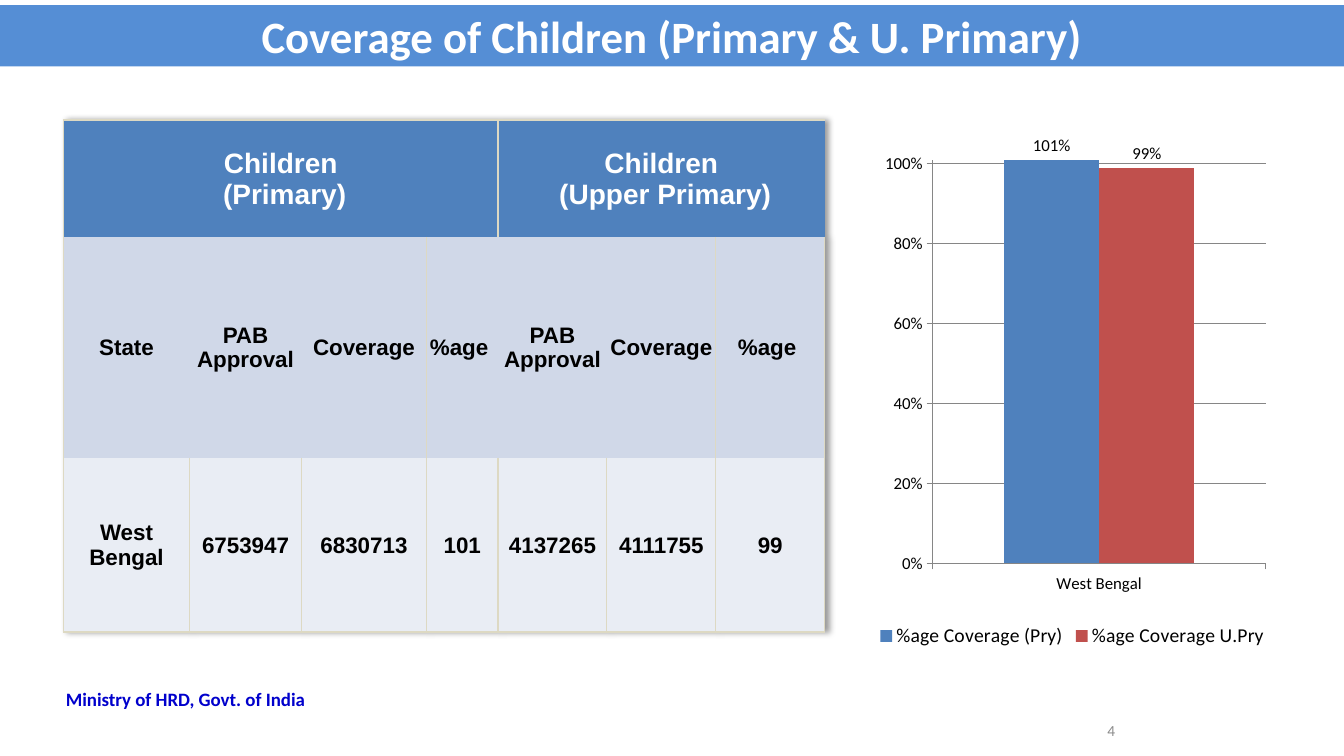
from lxml import etree
from pptx import Presentation
from pptx.chart.data import CategoryChartData
from pptx.dml.color import RGBColor
from pptx.enum.chart import XL_CHART_TYPE as ChartType, XL_LABEL_POSITION as LabelPos
from pptx.enum.chart import XL_LEGEND_POSITION as LegendPos, XL_TICK_MARK as Tick
from pptx.enum.shapes import MSO_SHAPE as Shape
from pptx.enum.text import MSO_ANCHOR as Anchor, PP_ALIGN as Align
from pptx.oxml import parse_xml
from pptx.oxml.ns import nsdecls, qn
from pptx.util import Inches, Pt

COLORS = {
    "banner": "558ED5", "white": "FFFFFF", "black": "000000",
    "primary": "4F81BD", "upper": "C0504D", "label_row": "D0D8E8",
    "data_row": "E9EDF4", "border": "DDD9C3", "footer": "0000CC",
    "number": "8C8C8C", "grid": "868686",
}
TITLE = "Coverage of Children (Primary & U. Primary)"
FOOTER = "Ministry of HRD, Govt. of India"
PAGE = "4"
GROUPS = [(0, 3, ["Children", " (Primary)"]), (4, 6, ["Children", " (Upper Primary)"])]
MEASURES = ["PAB Approval", "Coverage", "%age "]
LABELS = ["State"] + MEASURES * 2
VALUES = ["West Bengal", "6753947", "6830713", "101", "4137265", "4111755", "99"]
COLS = [1.25, 1.11, 1.24, 0.71, 1.08, 1.08, 1.08]
ROWS = [1.16, 2.19, 1.73]
DIVIDERS = [{4}, {3, 6}, {1, 2, 3, 4, 5, 6}]
SERIES = [("%age Coverage (Pry)", 1.01, "primary"), ("%age Coverage U.Pry", 0.99, "upper")]
PLOT = {"x": 0.166, "y": 0.084, "w": 0.797, "h": 0.751}


def rgb(name):
    return RGBColor.from_string(COLORS[name])


def style(font, size, color, name="Calibri", bold=False):
    font.size, font.name, font.bold = Pt(size), name, bold
    font.color.rgb = rgb(color)


def write(tf, lines, size, color, name="Calibri", bold=True, align=Align.CENTER):
    for i, line in enumerate(lines):
        p = tf.add_paragraph() if i else tf.paragraphs[0]
        p.alignment = align
        r = p.add_run()
        r.text = line
        style(r.font, size, color, name, bold)


def add_text(s, box, text, size, color, bold, align, anchor):
    tf = s.shapes.add_textbox(*map(Inches, box)).text_frame
    tf.word_wrap = True
    tf.vertical_anchor = anchor
    write(tf, [text], size, color, bold=bold, align=align)


def set_borders(cell, row, col):
    last = len(COLS)
    edges = DIVIDERS[row] | {0, last}
    shown = {
        "lnL": col in edges, "lnR": col + 1 in edges,
        "lnT": row == 0, "lnB": row == len(ROWS) - 1,
    }
    tcPr = cell._tc.get_or_add_tcPr()
    for i, (tag, visible) in enumerate(shown.items()):
        fill = f'<a:solidFill><a:srgbClr val="{COLORS["border"]}"/></a:solidFill>' if visible else "<a:noFill/>"
        tcPr.insert(i, parse_xml(f'<a:{tag} {nsdecls("a")} w="12700">{fill}</a:{tag}>'))


def add_table(s):
    box = map(Inches, (0.63, 1.19, sum(COLS), sum(ROWS)))
    table = s.shapes.add_table(len(ROWS), len(COLS), *box).table
    for column, width in zip(table.columns, COLS):
        column.width = Inches(width)
    for row, height in zip(table.rows, ROWS):
        row.height = Inches(height)
    for row, fill in enumerate(["primary", "label_row", "data_row"]):
        for col in range(len(COLS)):
            cell = table.cell(row, col)
            cell.fill.solid()
            cell.fill.fore_color.rgb = rgb(fill)
            cell.vertical_anchor = Anchor.MIDDLE
            cell.margin_left = cell.margin_right = cell.margin_top = Inches(0.01)
            cell.margin_bottom = 0
            set_borders(cell, row, col)
    for first, last, lines in GROUPS:
        table.cell(0, first).merge(table.cell(0, last))
        write(table.cell(0, first).text_frame, lines, 20, "white", "Arial")
    for row, texts in enumerate([LABELS, VALUES], 1):
        for col, text in enumerate(texts):
            write(table.cell(row, col).text_frame, [text], 16, "black", "Arial")
    shadow = parse_xml(
        f'<a:effectLst {nsdecls("a")}><a:outerShdw blurRad="50800" dist="38100" dir="0">'
        '<a:srgbClr val="000000"><a:alpha val="40000"/></a:srgbClr></a:outerShdw></a:effectLst>')
    table._tbl.tblPr.insert(0, shadow)


def set_plot_layout(chart):
    area = chart._chartSpace.chart.plotArea
    for old in area.findall(qn("c:layout")):
        area.remove(old)
    layout = etree.Element(qn("c:layout"))
    manual = etree.SubElement(layout, qn("c:manualLayout"))
    settings = {"layoutTarget": "inner", "xMode": "edge", "yMode": "edge", **PLOT}
    for tag, value in settings.items():
        etree.SubElement(manual, qn(f"c:{tag}")).set("val", str(value))
    area.insert(0, layout)


def add_chart(s):
    data = CategoryChartData(number_format="0%")
    data.categories = ["West Bengal"]
    for name, value, _ in SERIES:
        data.add_series(name, [value])
    box = map(Inches, (8.56, 1.14, 4.15, 5.33))
    chart = s.shapes.add_chart(ChartType.COLUMN_CLUSTERED, *box, data).chart
    style(chart.font, 12, "black")
    chart.has_title = False
    chart.has_legend = True
    chart.legend.position = LegendPos.BOTTOM
    chart.legend.include_in_layout = False
    style(chart.legend.font, 14, "black")
    plot = chart.plots[0]
    plot.gap_width, plot.overlap, plot.vary_by_categories = 150, 0, False
    for series, (_, _, color) in zip(plot.series, SERIES):
        series.format.fill.solid()
        series.format.fill.fore_color.rgb = rgb(color)
        labels = series.data_labels
        labels.show_value = True
        labels.number_format, labels.number_format_is_linked = "0%", False
        labels.position = LabelPos.OUTSIDE_END
    axis = chart.value_axis
    axis.minimum_scale, axis.maximum_scale, axis.major_unit = 0, 1.01, 0.2
    axis.tick_labels.number_format = "0%"
    axis.tick_labels.number_format_is_linked = False
    axis.major_gridlines.format.line.color.rgb = rgb("grid")
    for each in (axis, chart.category_axis):
        each.major_tick_mark = Tick.OUTSIDE
        each.format.line.color.rgb = rgb("grid")
    set_plot_layout(chart)


def main():
    prs = Presentation()
    prs.slide_width, prs.slide_height = Inches(13.33), Inches(7.5)
    s = prs.slides.add_slide(prs.slide_layouts[6])
    banner = s.shapes.add_shape(Shape.RECTANGLE, 0, Inches(0.05), prs.slide_width, Inches(0.61))
    banner.shadow.inherit = False
    banner.fill.solid()
    banner.fill.fore_color.rgb = rgb("banner")
    banner.line.fill.background()
    tf = banner.text_frame
    tf.word_wrap = True
    tf.vertical_anchor = Anchor.MIDDLE
    tf.margin_left = tf.margin_right = Inches(0.07)
    tf.margin_top = tf.margin_bottom = Inches(0.04)
    write(tf, [TITLE], 32, "white")
    add_chart(s)
    add_table(s)
    add_text(s, (8.83, 7.05, 2.33, 0.4), PAGE, 11, "number", False, Align.RIGHT, Anchor.MIDDLE)
    add_text(s, (0.37, 6.77, 2.94, 0.33), FOOTER, 13.5, "footer", True, Align.CENTER, Anchor.TOP)
    prs.save("out.pptx")


if __name__ == "__main__":
    main()
